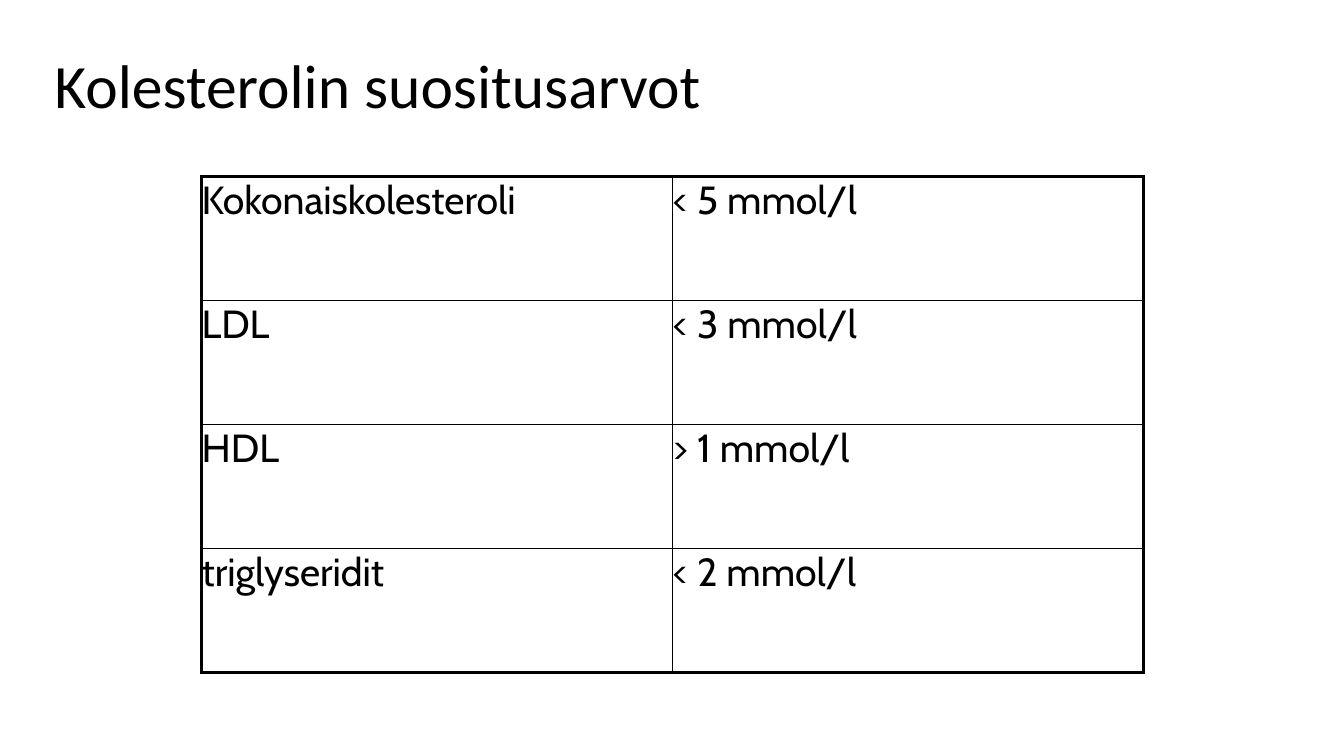
"""Build a slide with a table of recommended cholesterol values."""
import pptx
import pptx.dml.color
import pptx.enum.text
import pptx.oxml
import pptx.oxml.ns
import pptx.util
from pptx.util import Inches

BLACK = "000000"
OUTER, INNER = 2.25, 1
LIMITS = [
    ("Kokonaiskolesteroli", "< 5 mmol/l"),
    ("LDL", "< 3 mmol/l"),
    ("HDL", "> 1 mmol/l"),
    ("triglyseridit", "< 2 mmol/l"),
]


def write_text(frame, text, *, font, size, color=BLACK, spacing=1.0):
    para = frame.paragraphs[0]
    para.alignment = pptx.enum.text.PP_ALIGN.LEFT
    para.line_spacing = spacing
    span = para.add_run()
    span.text = text
    span.font.name = font
    span.font.size = pptx.util.Pt(size)
    span.font.bold = False
    span.font.color.rgb = pptx.dml.color.RGBColor.from_string(color)


def add_border(cell, side, width, color=BLACK):
    cell._tc.get_or_add_tcPr().append(pptx.oxml.parse_xml(
        f'<a:ln{side} {pptx.oxml.ns.nsdecls("a")} w="{pptx.util.Pt(width)}">'
        f'<a:solidFill><a:srgbClr val="{color}"/></a:solidFill></a:ln{side}>'))


deck = pptx.Presentation()
deck.slide_width, deck.slide_height = Inches(13.33), Inches(7.5)
page = deck.slides.add_slide(deck.slide_layouts[5])

title = page.shapes.title
title.left, title.top = Inches(0.44), Inches(0.25)
title.width, title.height = Inches(12.45), Inches(1.25)
title.text_frame.vertical_anchor = pptx.enum.text.MSO_ANCHOR.MIDDLE
write_text(title.text_frame, "Kolesterolin suositusarvot", font="Calibri", size=44, spacing=0.9)

table = page.shapes.add_table(
    len(LIMITS), 2, Inches(2), Inches(1.75), Inches(9.34), Inches(4.92)).table
table.first_row = False
table.horz_banding = False

for row, limit in enumerate(LIMITS):
    for column, text in enumerate(limit):
        cell = table.cell(row, column)
        cell.margin_left = cell.margin_right = 0
        cell.margin_top = cell.margin_bottom = 0
        write_text(cell.text_frame, text, font="Cabin", size=28)
        add_border(cell, "L", OUTER if column == 0 else INNER)
        add_border(cell, "R", OUTER if column == 1 else INNER)
        add_border(cell, "T", OUTER if row == 0 else INNER)
        add_border(cell, "B", OUTER if row == len(LIMITS) - 1 else INNER)
        cell.fill.background()

deck.save("out.pptx")
